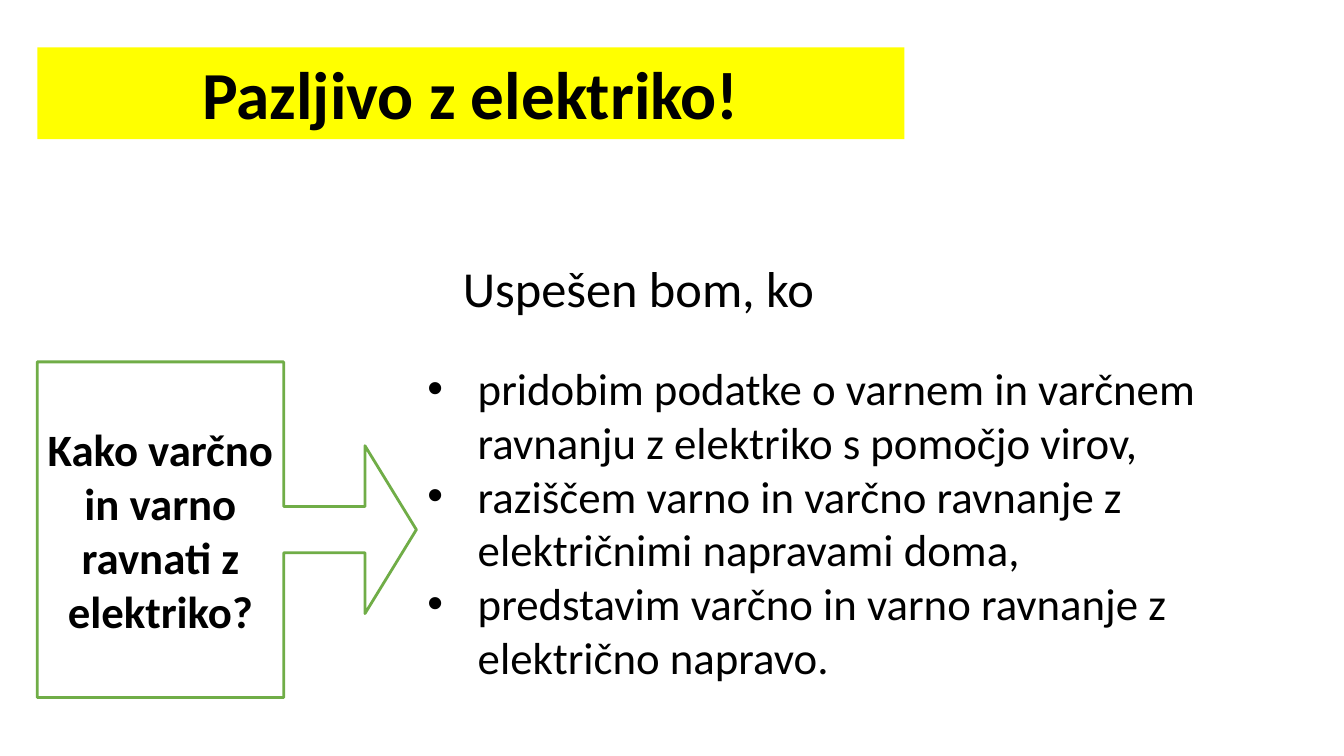
from dataclasses import dataclass

from lxml import etree
from pptx import Presentation
from pptx import util as u
from pptx.dml.color import RGBColor
from pptx.enum import shapes, text
from pptx.oxml import ns

EMU_PER_PX = 9144  # 100 px to the inch
BLACK, WHITE, YELLOW, GREEN = "000000", "FFFFFF", "FFFF00", "70AD47"
TOP, MIDDLE = text.MSO_ANCHOR.TOP, text.MSO_ANCHOR.MIDDLE
LEFT, CENTER = text.PP_ALIGN.LEFT, text.PP_ALIGN.CENTER

GOALS = [
    "pridobim podatke o varnem in varčnem ravnanju z elektriko s pomočjo virov,",
    "raziščem varno in varčno ravnanje z električnimi napravami doma,",
    "predstavim varčno in varno ravnanje z električno napravo.",
]


@dataclass(frozen=True)
class Box:
    left: int
    top: int
    width: int
    height: int

    def emu(self) -> list[u.Emu]:
        return [px(n) for n in (self.left, self.top, self.width, self.height)]


@dataclass(frozen=True)
class Panel:
    """A filled shape with bold centred words."""
    kind: shapes.MSO_SHAPE
    box: Box
    words: str
    size: int
    fill: str
    line: str | None = None
    adjustments: tuple[float, ...] = ()
    anchor: text.MSO_ANCHOR = MIDDLE


PANELS = [
    Panel(shapes.MSO_SHAPE.RIGHT_ARROW_CALLOUT, Box(37, 359, 376, 333),
          "Kako varčno in varno ravnati z elektriko?", 32, WHITE, GREEN,
          (0.138, 0.25, 0.153, 0.65)),
    Panel(shapes.MSO_SHAPE.RECTANGLE, Box(37, 47, 860, 91),
          "Pazljivo z elektriko!", 48, YELLOW, anchor=TOP),
]


def px(length: int) -> u.Emu:
    return u.Emu(length * EMU_PER_PX)


def colour(hex_code: str) -> RGBColor:
    return RGBColor.from_string(hex_code)


def add_bullet(paragraph, indent: int) -> None:
    props = paragraph._p.get_or_add_pPr()
    props.set("marL", str(px(indent)))
    props.set("indent", str(-px(indent)))
    etree.SubElement(props, ns.qn("a:buFont")).set("typeface", "Arial")
    etree.SubElement(props, ns.qn("a:buChar")).set("char", "•")


def write(frame, lines: list[str], *, size: int, bold: bool = False,
          align: text.PP_ALIGN = LEFT, anchor: text.MSO_ANCHOR = TOP,
          bullet_indent: int = 0) -> None:
    frame.word_wrap = True
    frame.auto_size = text.MSO_AUTO_SIZE.NONE
    frame.vertical_anchor = anchor
    for index, line in enumerate(lines):
        paragraph = frame.add_paragraph() if index else frame.paragraphs[0]
        paragraph.alignment = align
        if bullet_indent:
            add_bullet(paragraph, bullet_indent)
        run = paragraph.add_run()
        run.text = line
        run.font.name = "Calibri"
        run.font.size = u.Pt(size)
        run.font.bold = bold
        run.font.color.rgb = colour(BLACK)


def draw_panel(slide, panel: Panel) -> None:
    shape = slide.shapes.add_shape(panel.kind, *panel.box.emu())
    shape.shadow.inherit = False
    for index, value in enumerate(panel.adjustments):
        shape.adjustments[index] = value
    shape.fill.solid()
    shape.fill.fore_color.rgb = colour(panel.fill)
    if panel.line:
        shape.line.color.rgb = colour(panel.line)
        shape.line.width = u.Pt(2)
    else:
        shape.line.fill.background()
    write(shape.text_frame, [panel.words], size=panel.size, bold=True,
          align=CENTER, anchor=panel.anchor)


def main() -> None:
    deck = Presentation()
    deck.slide_width, deck.slide_height = px(1333), px(750)
    slide = deck.slides.add_slide(deck.slide_layouts[5])

    title = slide.shapes.title
    title.left, title.top, title.width, title.height = Box(449, 238, 495, 95).emu()
    write(title.text_frame, ["Uspešen bom, ko"], size=36, anchor=MIDDLE)

    goals = slide.shapes.add_textbox(*Box(414, 353, 853, 333).emu())
    write(goals.text_frame, GOALS, size=32, bullet_indent=50)

    for panel in PANELS:
        draw_panel(slide, panel)
    deck.save("out.pptx")


if __name__ == "__main__":
    main()
